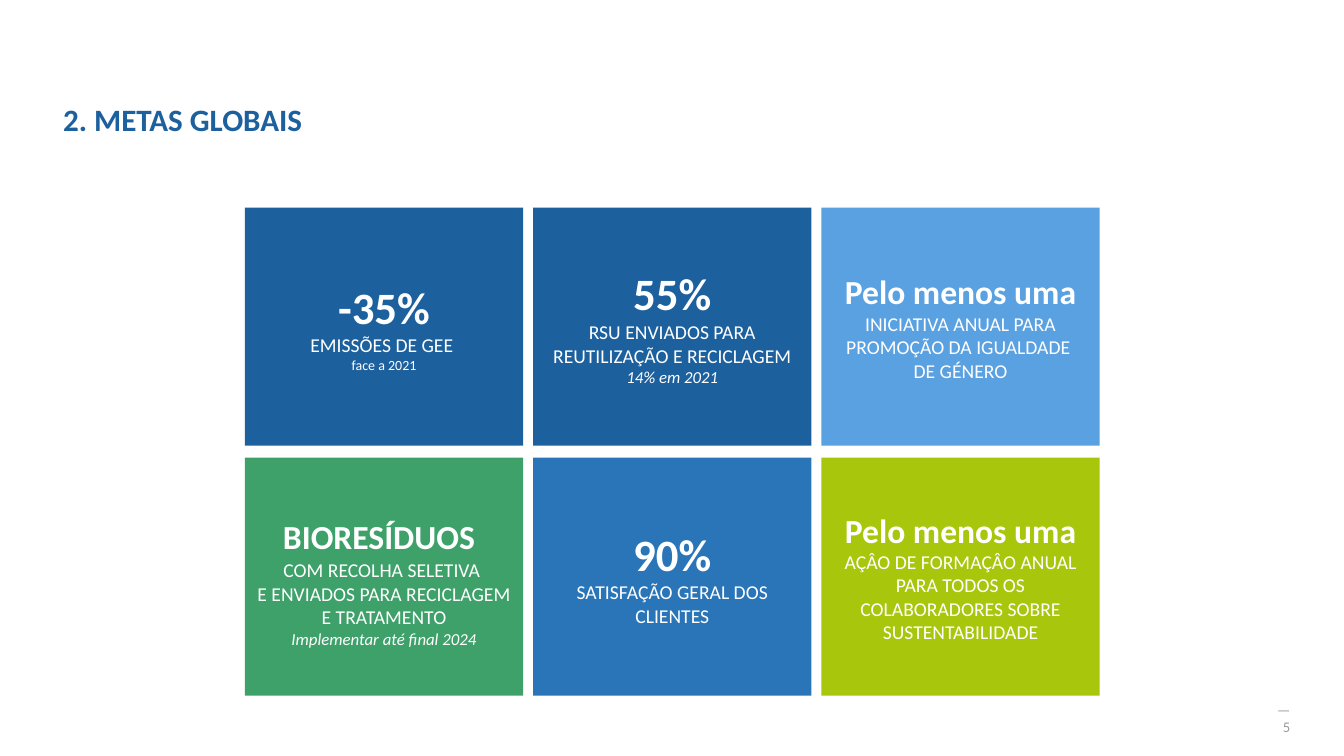
from dataclasses import dataclass
from typing import NamedTuple

from pptx import Presentation
from pptx.dml.color import RGBColor
from pptx.enum.shapes import MSO_SHAPE
from pptx.enum.text import MSO_ANCHOR, PP_ALIGN
from pptx.util import Pt

RECT = MSO_SHAPE.RECTANGLE
MIDDLE = MSO_ANCHOR.MIDDLE
LEFT, CENTER, RIGHT = PP_ALIGN.LEFT, PP_ALIGN.CENTER, PP_ALIGN.RIGHT


@dataclass(frozen=True)
class Theme:
    font: str = "Calibri"
    navy: str = "1C609E"
    blue: str = "2A75B8"
    sky: str = "5AA1E2"
    green: str = "3EA16A"
    lime: str = "A7C60C"
    white: str = "FFFFFF"
    grey: str = "9B9B9B"
    title: float = 22.2
    figure: float = 32
    headline: float = 24
    body: float = 14
    note: float = 12
    small: float = 10
    page: float = 10.5


THEME = Theme()


class Span(NamedTuple):
    text: str
    size: float
    bold: bool = False
    italic: bool = False


@dataclass(frozen=True)
class Goal:
    fill: str
    paragraphs: list[list[Span]]


def head(text: str, size: float = THEME.figure) -> Span:
    return Span(text, size, bold=True)


def body(text: str) -> Span:
    return Span(text, THEME.body)


GRID_LEFT, GRID_TOP = 175, 148.3
TILE_W, TILE_H = 198.7, 170
STEP_X, STEP_Y = 205.9, 178.6

GOALS = [
    [
        Goal(THEME.navy, [[head("-35%")],
                          [body("EMISSÕES DE GEE \n"), Span("face a 2021", THEME.small)]]),
        Goal(THEME.navy, [[head("55%")],
                          [body("RSU ENVIADOS PARA REUTILIZAÇÃO E RECICLAGEM\n"),
                           Span("14% em 2021", THEME.note, italic=True)]]),
        Goal(THEME.sky, [[head("Pelo menos uma", THEME.headline)],
                         [body("INICIATIVA ANUAL PARA PROMOÇÃO DA IGUALDADE \nDE GÉNERO")]]),
    ],
    [
        Goal(THEME.green, [[head("BIORESÍDUOS", THEME.headline), head(" ")],
                           [body("COM RECOLHA SELETIVA \n"
                                 "E ENVIADOS PARA RECICLAGEM E TRATAMENTO\n"),
                            Span("Implementar até final 2024", THEME.note, italic=True)]]),
        Goal(THEME.blue, [[head("90%")], [body("SATISFAÇÃO GERAL DOS CLIENTES")]]),
        Goal(THEME.lime, [[head("Pelo menos uma", THEME.headline)],
                          [body("AÇÂO DE FORMAÇÂO ANUAL PARA TODOS OS "
                                "COLABORADORES SOBRE SUSTENTABILIDADE")]]),
    ],
]


def write(p, text: str, *, size: float, color: str, bold: bool = False,
          italic: bool = False, align: PP_ALIGN = LEFT) -> None:
    """Append formatted text to a paragraph, turning newlines into line breaks."""
    p.alignment = align
    for i, line in enumerate(text.split("\n")):
        if i:
            p.add_line_break()
        if line:
            r = p.add_run()
            r.text = line
            r.font.name = THEME.font
            r.font.size = Pt(size)
            r.font.bold = bold
            r.font.italic = italic
            r.font.color.rgb = RGBColor.from_string(color)


def add_label(s, x: float, y: float, w: float, h: float, text: str, **fmt):
    """Add a one-paragraph text box and return its paragraph."""
    tf = s.shapes.add_textbox(Pt(x), Pt(y), Pt(w), Pt(h)).text_frame
    tf.word_wrap = True
    p = tf.paragraphs[0]
    write(p, text, **fmt)
    return p


def add_goal(s, goal: Goal, row: int, col: int) -> None:
    """Draw one goal tile in its grid cell."""
    sp = s.shapes.add_shape(RECT, Pt(GRID_LEFT + col * STEP_X),
                            Pt(GRID_TOP + row * STEP_Y), Pt(TILE_W), Pt(TILE_H))
    sp.shadow.inherit = False
    sp.fill.solid()
    sp.fill.fore_color.rgb = RGBColor.from_string(goal.fill)
    sp.line.fill.background()
    tf = sp.text_frame
    tf.word_wrap = True
    tf.vertical_anchor = MIDDLE
    for i, spans in enumerate(goal.paragraphs):
        p = tf.add_paragraph() if i else tf.paragraphs[0]
        for span in spans:
            write(p, span.text, size=span.size, color=THEME.white,
                  bold=span.bold, italic=span.italic, align=CENTER)


def main() -> None:
    """Build and save the slide."""
    prs = Presentation()
    prs.slide_width, prs.slide_height = Pt(960), Pt(540)
    s = prs.slides.add_slide(prs.slide_layouts[6])
    title = add_label(s, 38, 75.6, 820, 28.8, "2. METAS GLOBAIS",
                      size=THEME.title, color=THEME.navy, bold=True)
    title.line_spacing = 0.7
    add_label(s, 712.8, 496.8, 216, 38.2, "—\n5",
              size=THEME.page, color=THEME.grey, align=RIGHT)
    for row, goals in enumerate(GOALS):
        for col, goal in enumerate(goals):
            add_goal(s, goal, row, col)
    prs.save("out.pptx")


if __name__ == "__main__":
    main()
